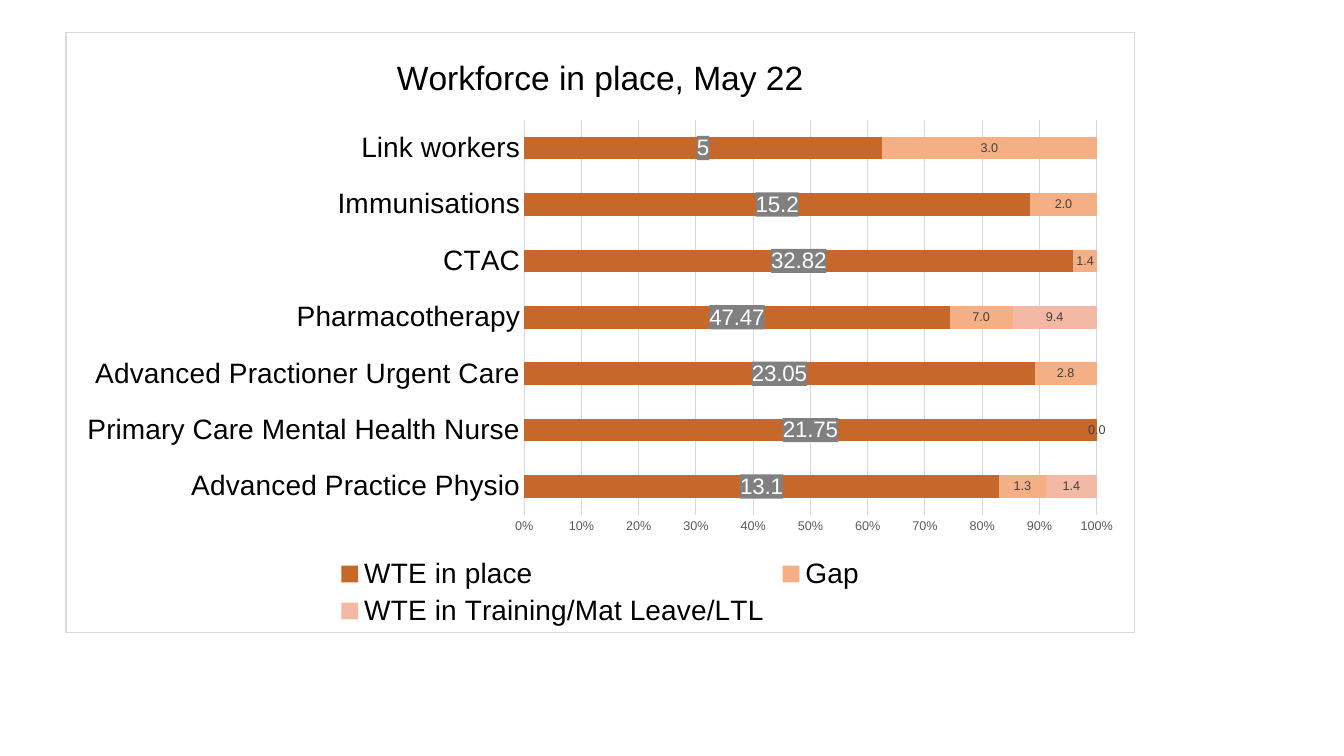
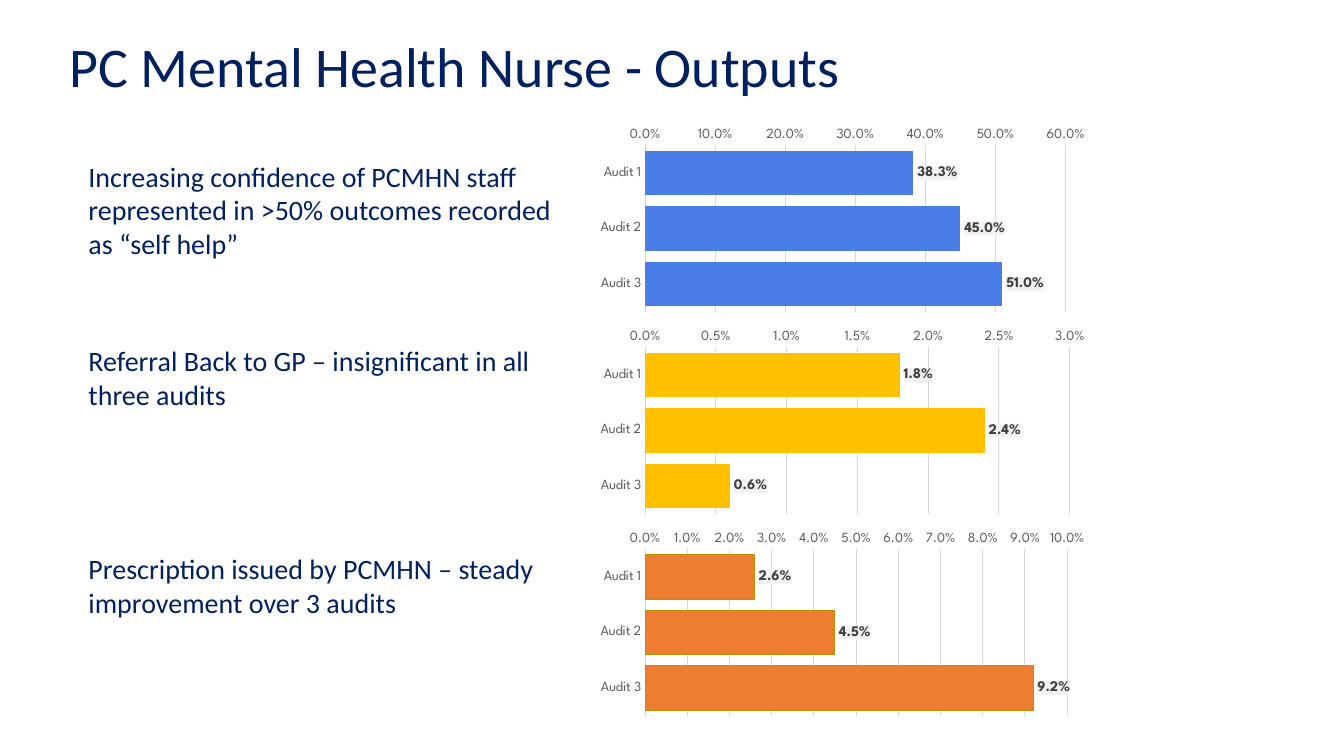
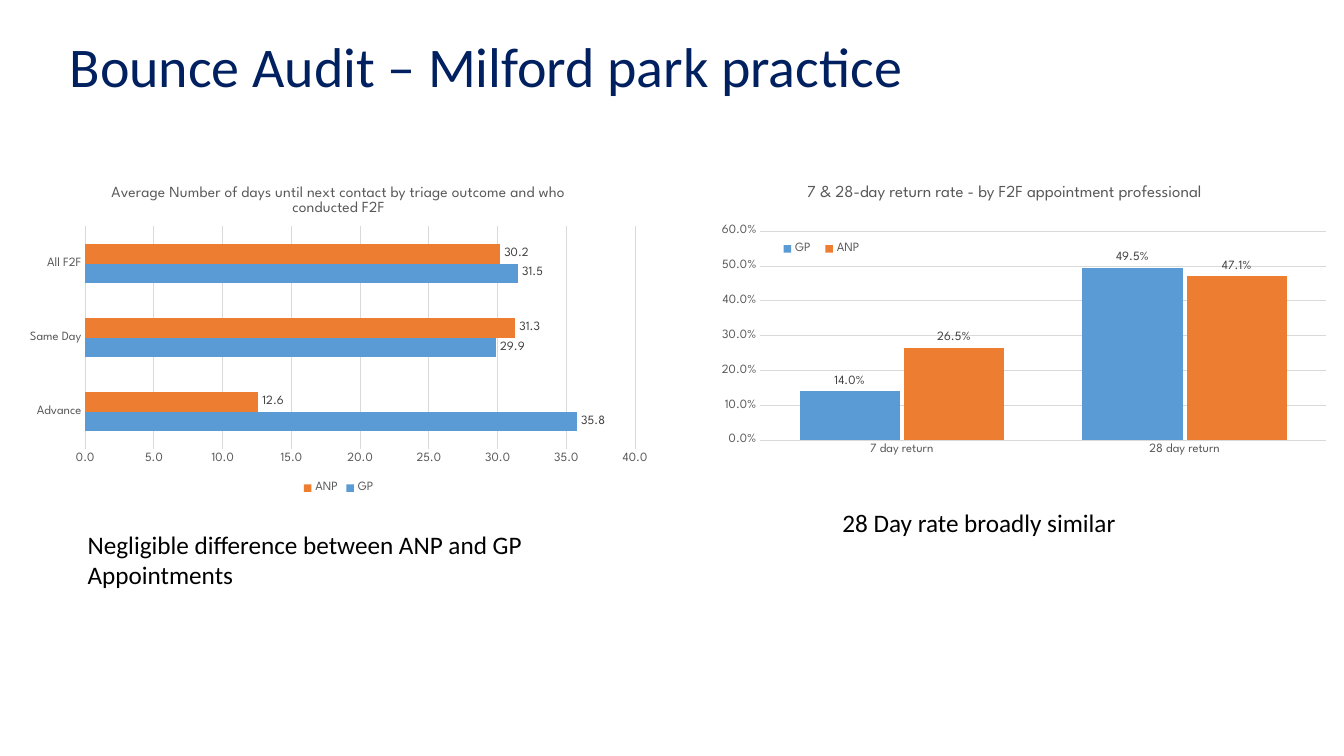
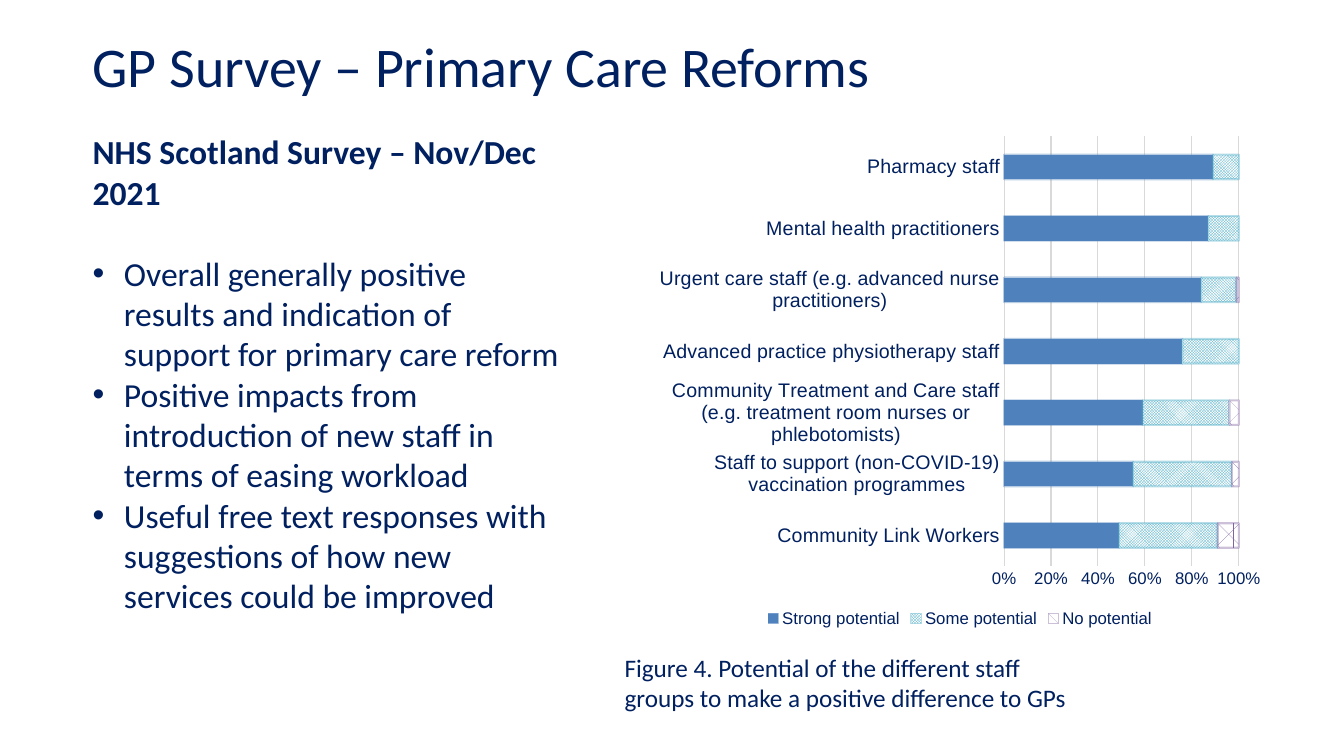
from dataclasses import dataclass
from typing import Any, Optional

from lxml import etree
from pptx import Presentation, oxml
from pptx import util as u
from pptx.chart import data as chart_data
from pptx.dml.color import RGBColor
from pptx.enum import chart as charts
from pptx.enum import dml, text
from pptx.oxml import ns


@dataclass(frozen=True)
class Theme:
    navy: str = "002060"
    black: str = "000000"
    white: str = "FFFFFF"
    grey: str = "595959"
    label_grey: str = "404040"
    grid: str = "D9D9D9"
    label_back: str = "F2F2F2"
    dark_back: str = "808080"
    rust: str = "C56829"
    peach: str = "F4B084"
    pink: str = "F3B9A4"
    royal: str = "4A7EE6"
    gold: str = "FFC000"
    dark_gold: str = "BF9000"
    orange: str = "ED7D31"
    blue: str = "5B9BD5"
    steel: str = "4F81BD"
    teal: str = "4BACC6"
    purple: str = "8064A2"
    text_font: str = "Calibri"
    plain_font: str = "Arial"
    chart_font: str = "League Spartan"
    title_size: int = 40
    list_size: int = 24
    text_size: int = 20
    caption_size: int = 18


THEME = Theme()
BAR = charts.XL_CHART_TYPE.BAR_CLUSTERED
COLUMN = charts.XL_CHART_TYPE.COLUMN_CLUSTERED
STACKED = charts.XL_CHART_TYPE.BAR_STACKED_100


@dataclass
class Labels:
    size: float = 9
    color: str = THEME.label_grey
    number_format: str = "0.0"
    bold: bool = False
    back: Optional[str] = None


@dataclass
class Series:
    name: str
    values: list
    color: str
    labels: Optional[Labels] = None
    pattern: Any = None
    line: Optional[str] = None
    line_width: float = 0.75
    line_opacity: int = 100


@dataclass
class ChartStyle:
    """Sizes and colours of a chart's text, and the spacing of its bars."""
    font: str = THEME.chart_font
    category_size: float = 9
    value_size: float = 9
    legend_size: float = 9
    title_size: float = 11
    category_color: str = THEME.grey
    value_color: str = THEME.grey
    title_color: str = THEME.grey
    gap: int = 150
    overlap: int = 0
    value_format: str = "0%"
    major_unit: Optional[float] = None
    reverse: bool = False
    border: Optional[str] = None


def rgb(color):
    return RGBColor.from_string(color)


def set_attributes(target, values):
    for name, value in values.items():
        setattr(target, name, value)


def set_font(font, size, color, name=THEME.text_font, bold=False):
    set_attributes(font, {"name": name, "size": u.Pt(size), "bold": bold})
    font.color.rgb = rgb(color)


def place(shape, box):
    for name, value in zip(("left", "top", "width", "height"), box):
        setattr(shape, name, u.Cm(value))


def fill_paragraph(paragraph, words, size, color, bold=False):
    run = paragraph.add_run()
    run.text = words
    set_font(run.font, size, color, bold=bold)


def add_title(slide, words, box):
    title = slide.shapes.title
    place(title, box)
    set_attributes(title.text_frame, {
        "word_wrap": True,
        "auto_size": text.MSO_AUTO_SIZE.NONE,
        "vertical_anchor": text.MSO_ANCHOR.MIDDLE,
    })
    paragraph = title.text_frame.paragraphs[0]
    set_attributes(paragraph, {"alignment": text.PP_ALIGN.LEFT, "line_spacing": 0.9})
    fill_paragraph(paragraph, words, THEME.title_size, THEME.navy)


def add_text(slide, words, box, size, color):
    frame = slide.shapes.add_textbox(*map(u.Cm, box)).text_frame
    frame.word_wrap = True
    fill_paragraph(frame.paragraphs[0], words, size, color)


def add_headed_list(slide, heading, items, box):
    body = slide.placeholders[1]
    place(body, box)
    frame = body.text_frame
    set_attributes(frame, {"word_wrap": True, "auto_size": text.MSO_AUTO_SIZE.NONE})
    for index, words in enumerate([heading, *items]):
        is_heading = index == 0
        paragraph = frame.paragraphs[0] if is_heading else frame.add_paragraph()
        indent = 0 if is_heading else u.Cm(0.79)
        properties = paragraph._p.get_or_add_pPr()
        properties.set("marL", str(indent))
        properties.set("indent", str(-indent))
        if is_heading:
            etree.SubElement(properties, ns.qn("a:buNone"))
        paragraph.space_before = u.Pt(29 if index == 1 else 0)
        fill_paragraph(paragraph, words, THEME.list_size, THEME.navy, is_heading)


def shape_properties(fill=None, line=None):
    """Build the c:spPr element that python-pptx does not offer for charts and labels."""
    def paint(color):
        if color is None:
            return "<a:noFill/>"
        return f'<a:solidFill><a:srgbClr val="{color}"/></a:solidFill>'
    return oxml.parse_xml(
        f'<c:spPr {ns.nsdecls("c", "a")}>{paint(fill)}'
        f'<a:ln w="9525">{paint(line)}</a:ln></c:spPr>')


def set_layout(element, index, box, inner=False):
    """Fix a chart part at fractions of the chart's size."""
    for layout in element.findall(ns.qn("c:layout")):
        element.remove(layout)
    parts = [("layoutTarget", "inner")] if inner else []
    parts += [("xMode", "edge"), ("yMode", "edge")]
    parts += zip("xywh", box)
    settings = "".join(f'<c:{name} val="{value}"/>' for name, value in parts)
    element.insert(index, oxml.parse_xml(
        f'<c:layout {ns.nsdecls("c")}><c:manualLayout>{settings}'
        '</c:manualLayout></c:layout>'))


def format_axes(chart, style):
    category_axis, value_axis = chart.category_axis, chart.value_axis
    for axis in (category_axis, value_axis):
        set_attributes(axis, {
            "major_tick_mark": charts.XL_TICK_MARK.NONE,
            "minor_tick_mark": charts.XL_TICK_MARK.NONE,
        })
    category_axis.reverse_order = style.reverse
    set_attributes(value_axis, {"has_major_gridlines": True,
                                "major_unit": style.major_unit})
    set_attributes(value_axis.tick_labels, {
        "number_format": style.value_format, "number_format_is_linked": False})
    set_font(category_axis.tick_labels.font, style.category_size,
             style.category_color, style.font)
    set_font(value_axis.tick_labels.font, style.value_size,
             style.value_color, style.font)
    for line in (category_axis.format.line, value_axis.major_gridlines.format.line):
        line.color.rgb = rgb(THEME.grid)
        line.width = u.Pt(0.75)
    value_axis.format.line.fill.background()


def format_labels(series, labels, font, outside):
    data_labels = series.data_labels
    set_attributes(data_labels, {
        "show_value": True,
        "number_format": labels.number_format,
        "number_format_is_linked": False,
    })
    if outside:
        data_labels.position = charts.XL_LABEL_POSITION.OUTSIDE_END
    set_font(data_labels.font, labels.size, labels.color, font, labels.bold)
    if labels.back:
        text_properties = data_labels._element.find(ns.qn("c:txPr"))
        text_properties.addprevious(shape_properties(labels.back))


def format_series(series, details):
    fill = series.format.fill
    if details.pattern is None:
        fill.solid()
        fill.fore_color.rgb = rgb(details.color)
    else:
        fill.patterned()
        fill.pattern = details.pattern
        fill.fore_color.rgb = rgb(details.color)
        fill.back_color.rgb = rgb(THEME.white)
    line = series.format.line
    if details.line is None:
        line.fill.background()
        return
    line.color.rgb = rgb(details.line)
    line.width = u.Pt(details.line_width)
    if details.line_opacity < 100:
        outline = series._element.spPr.find(ns.qn("a:ln"))
        color = next(outline.iter(ns.qn("a:srgbClr")))
        etree.SubElement(color, ns.qn("a:alpha"),
                         val=str(details.line_opacity * 1000))


def add_bar_chart(slide, kind, box, categories, all_series, style,
                  title=None, legend=False):
    data = chart_data.CategoryChartData()
    data.categories = categories
    for details in all_series:
        data.add_series(details.name, details.values)
    chart = slide.shapes.add_chart(kind, *map(u.Cm, box), data).chart
    set_font(chart.font, 10, THEME.black, style.font)
    chart.font._element.getparent()
    chart._chartSpace.find(ns.qn("c:txPr")).addprevious(
        shape_properties(THEME.white, style.border))

    chart.has_title = title is not None
    if title:
        paragraph = chart.chart_title.text_frame.paragraphs[0]
        run = paragraph.add_run()
        run.text = title
        set_font(run.font, style.title_size, style.title_color, style.font)
    chart.has_legend = legend
    if legend:
        set_attributes(chart.legend, {
            "position": charts.XL_LEGEND_POSITION.BOTTOM, "include_in_layout": False})
        set_font(chart.legend.font, style.legend_size, style.category_color, style.font)

    format_axes(chart, style)
    plot = chart.plots[0]
    set_attributes(plot, {"gap_width": style.gap, "overlap": style.overlap,
                          "vary_by_categories": False})
    for series, details in zip(plot.series, all_series):
        format_series(series, details)
        if details.labels:
            format_labels(series, details.labels, style.font, kind != STACKED)
    return chart


def build_workforce(slide):
    style = ChartStyle(
        font=THEME.plain_font, category_size=20, legend_size=20, title_size=24,
        category_color=THEME.black, title_color=THEME.black,
        overlap=100, border=THEME.grid)
    in_place = Labels(16, THEME.white, "General", back=THEME.dark_back)
    categories = [
        "Advanced Practice Physio", "Primary Care Mental Health Nurse",
        "Advanced Practioner Urgent Care", "Pharmacotherapy", "CTAC",
        "Immunisations", "Link workers"]
    all_series = [
        Series("WTE in place", [13.1, 21.75, 23.05, 47.47, 32.82, 15.2, 5],
               THEME.rust, in_place),
        Series("Gap", [1.3, 0, 2.8, 7, 1.4, 2, 3], THEME.peach, Labels()),
        Series("WTE in Training/Mat Leave/LTL",
               [1.4, None, None, 9.4, None, None, None], THEME.pink,
               Labels(number_format="General")),
    ]
    add_bar_chart(slide, STACKED, (1.65, 0.81, 26.95, 15.14), categories, all_series,
                  style, "Workforce in place, May 22", legend=True)


def build_nurse_outputs(slide):
    add_title(slide, "PC Mental Health Nurse - Outputs", (1.5, -0.1, 29.21, 3.68))
    style = ChartStyle(category_size=10, value_size=10, gap=25,
                       value_format="0.0%", reverse=True)
    labels = Labels(10.5, number_format="0.0%", bold=True, back=THEME.label_back)
    audits = [
        ("Increasing confidence of PCMHN staff represented in >50% outcomes "
         "recorded as “self help”", 3.89, 2.82,
         [0.383, 0.45, 0.51], THEME.royal, None),
        ("Referral Back to GP – insignificant in all three audits", 8.53, 1.96,
         [0.018, 0.024, 0.006], THEME.gold, None),
        ("Prescription issued by PCMHN – steady improvement over 3 audits", 13.77, 1.96,
         [0.026, 0.045, 0.092], THEME.orange, THEME.dark_gold),
    ]
    for row, (words, top, height, values, color, line) in enumerate(audits):
        add_bar_chart(slide, BAR, (14.88, 3.15 + 5.09 * row, 12.7, 4.8),
                      ["Audit 1", "Audit 2", "Audit 3"],
                      [Series("Series 1", values, color, labels, line=line)], style)
        add_text(slide, words, (1.98, top, 12.37, height), THEME.text_size, THEME.navy)


def build_bounce_audit(slide):
    add_title(slide, "Bounce Audit – Milford park practice", (1.5, -0.1, 29.92, 3.68))

    def by_professional(gp, anp, number_format):
        labels = Labels(number_format=number_format)
        return [Series("GP", gp, THEME.blue, labels),
                Series("ANP", anp, THEME.orange, labels)]

    add_bar_chart(
        slide, BAR, (0.43, 4.27, 16.21, 8.28), ["Advance", "Same Day", "All F2F"],
        by_professional([35.8, 29.9, 31.5], [12.6, 31.3, 30.2], "0.0"),
        ChartStyle(gap=182, value_format="0.0"),
        "Average Number of days until next contact by triage outcome "
        "and who conducted F2F", legend=True)
    return_rate = add_bar_chart(
        slide, COLUMN, (17.22, 4.27, 16.21, 7.42), ["7 day return", "28 day return"],
        by_professional([0.14, 0.495], [0.265, 0.471], "0.0%"),
        ChartStyle(title_size=12, gap=78, overlap=-4, value_format="0.0%"),
        "7 & 28-day return rate - by F2F appointment professional", legend=True)
    plot_area = return_rate._chartSpace.chart.plotArea
    set_layout(plot_area, 0, (0.12, 0.21, 0.88, 0.71), inner=True)
    set_layout(return_rate.legend._element, 1, (0.14, 0.23, 0.15, 0.08))

    captions = [
        ("28 Day rate broadly similar", (20.98, 12.67, 9.78, 1.02)),
        ("Negligible difference between ANP and GP Appointments",
         (1.96, 13.21, 12.34, 1.8)),
    ]
    for words, box in captions:
        add_text(slide, words, box, THEME.caption_size, THEME.black)


def build_survey(slide):
    add_title(slide, "GP Survey – Primary Care Reforms", (2.08, 0.76, 21.97, 1.96))
    add_headed_list(slide, "NHS Scotland Survey – Nov/Dec 2021", [
        "Overall generally positive results and indication of support for "
        "primary care reform",
        "Positive impacts from introduction of new staff in terms of easing workload",
        "Useful free text responses with suggestions of how new services "
        "could be improved",
    ], (2.08, 3.18, 12.37, 12.57))

    style = ChartStyle(
        font=THEME.plain_font, category_size=14, value_size=12, legend_size=12,
        category_color=THEME.navy, value_color=THEME.navy, overlap=100, major_unit=0.2)
    categories = [
        "Community Link Workers",
        "Staff to support (non-COVID-19) vaccination programmes",
        "Community Treatment and Care staff (e.g. treatment room nurses "
        "or phlebotomists)",
        "Advanced practice physiotherapy staff",
        "Urgent care staff (e.g. advanced nurse practitioners)",
        "Mental health practitioners", "Pharmacy staff"]
    answers = [
        ("Strong potential", [49, 55, 59, 76, 84, 87, 89], THEME.steel, None),
        ("Some potential", [42, 42, 37, 24, 15, 13, 11], THEME.teal,
         dml.MSO_PATTERN.SMALL_CHECKER_BOARD),
        ("No potential", [9, 3, 4, 0, 1, 0, 0], THEME.purple, dml.MSO_PATTERN.DIVOT),
    ]
    all_series = [
        Series(name, values, color, pattern=pattern, line=color,
               line_width=1.5, line_opacity=40)
        for name, values, color, pattern in answers]
    add_bar_chart(slide, STACKED, (16.31, 3.18, 15.77, 12.73), categories, all_series,
                  style, legend=True)
    add_text(slide, "Figure 4. Potential of the different staff groups to make "
             "a positive difference to GPs", (15.49, 16.31, 12.22, 1.8),
             THEME.caption_size, THEME.navy)


def main():
    presentation = Presentation()
    presentation.slide_width = u.Cm(33.87)
    presentation.slide_height = u.Cm(19.05)
    title_and_content, title_only, blank = (
        presentation.slide_layouts[index] for index in (1, 5, 6))
    for layout, build in ((blank, build_workforce), (title_only, build_nurse_outputs),
                          (title_only, build_bounce_audit),
                          (title_and_content, build_survey)):
        build(presentation.slides.add_slide(layout))
    presentation.save("out.pptx")


if __name__ == "__main__":
    main()
